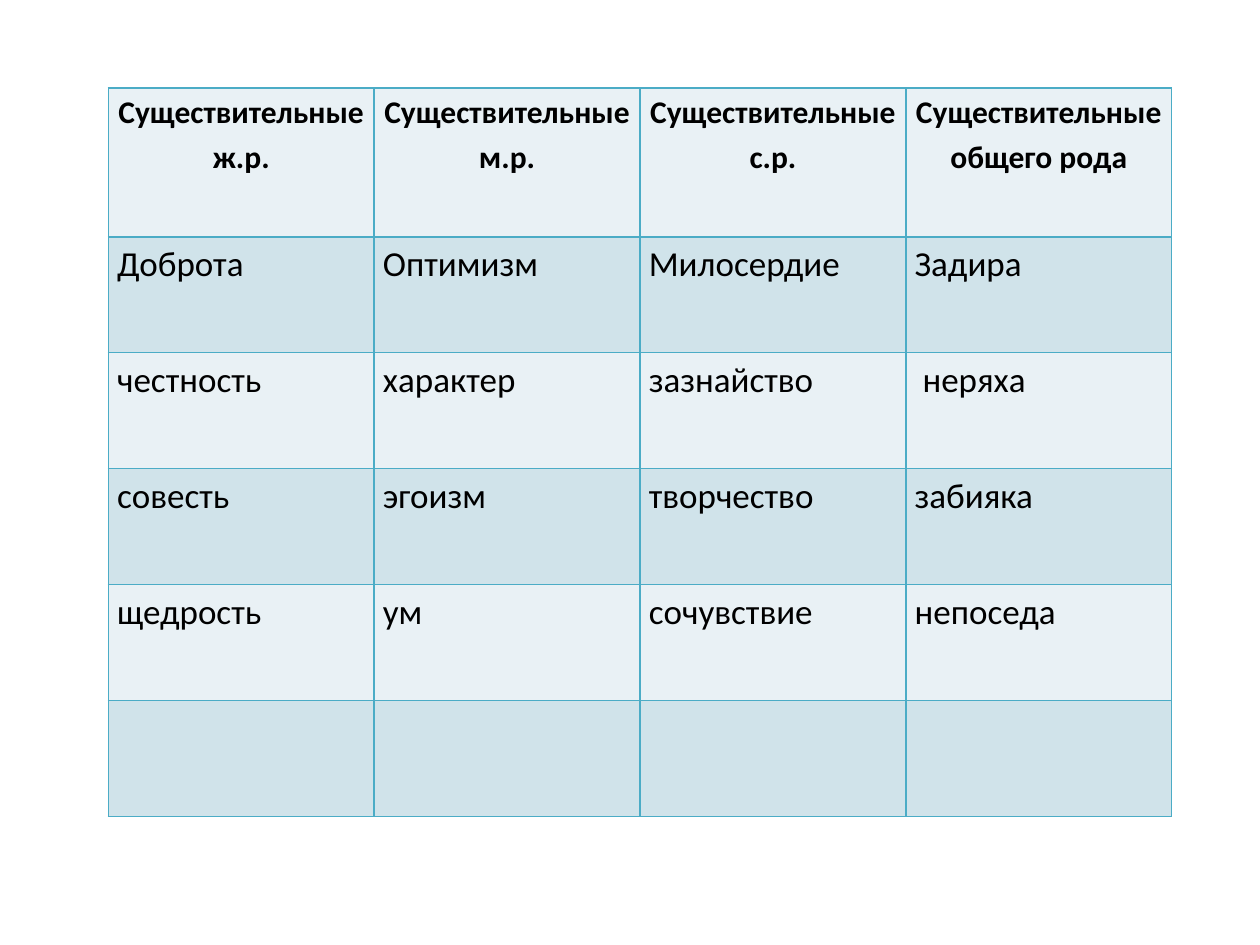
from lxml.etree import SubElement
from pptx import Presentation
from pptx.dml.color import RGBColor
from pptx.enum.text import PP_ALIGN as Align
from pptx.oxml.ns import qn
from pptx.util import Inches, Pt

BORDER = "4BACC6"
BANDS = ["E9F1F5", "D0E3EA"]
NOUNS = [
    ["Существительные ж.р.", "Существительные м.р.",
     "Существительные с.р.", "Существительные общего рода"],
    ["Доброта", "Оптимизм", "Милосердие", "Задира"],
    ["честность", "характер", "зазнайство", " неряха"],
    ["совесть", "эгоизм", "творчество", "забияка"],
    ["щедрость", "ум", "сочувствие", "непоседа"],
    ["", "", "", ""],
]
ROW_HEIGHTS = [1.18] + [0.92] * 5
COLUMN_WIDTH = 2.11


def write(cell, text, size=20, bold=False, align=Align.LEFT, color="000000"):
    cell.margin_left = cell.margin_right = Inches(0.07)
    cell.margin_top = cell.margin_bottom = 0
    paragraph = cell.text_frame.paragraphs[0]
    paragraph.alignment = align
    paragraph.line_spacing = 1.15
    run = paragraph.add_run()
    run.text = text
    run.font.name = "Calibri"
    run.font.size = Pt(size)
    run.font.bold = bold
    run.font.color.rgb = RGBColor.from_string(color)


def outline(cell, color, width=1):
    """Draw all four borders; call before filling, as the schema puts lines first."""
    properties = cell._tc.get_or_add_tcPr()
    for side in ("a:lnL", "a:lnR", "a:lnT", "a:lnB"):
        line = SubElement(properties, qn(side), w=str(Pt(width)))
        SubElement(SubElement(line, qn("a:solidFill")), qn("a:srgbClr"), val=color)


deck = Presentation()
deck.slide_width, deck.slide_height = Inches(10), Inches(7.5)
slide = deck.slides.add_slide(deck.slide_layouts[6])

noun_table = slide.shapes.add_table(
    len(NOUNS), len(NOUNS[0]), Inches(0.86), Inches(0.7),
    Inches(COLUMN_WIDTH * len(NOUNS[0])), Inches(sum(ROW_HEIGHTS))).table
for column in noun_table.columns:
    column.width = Inches(COLUMN_WIDTH)

for row_index, (nouns, height) in enumerate(zip(NOUNS, ROW_HEIGHTS)):
    noun_table.rows[row_index].height = Inches(height)
    heading = {"size": 18, "bold": True, "align": Align.CENTER} if row_index == 0 else {}
    for column_index, noun in enumerate(nouns):
        cell = noun_table.cell(row_index, column_index)
        outline(cell, BORDER)
        cell.fill.solid()
        cell.fill.fore_color.rgb = RGBColor.from_string(BANDS[row_index % 2])
        if noun:
            write(cell, noun, **heading)

deck.save("out.pptx")
